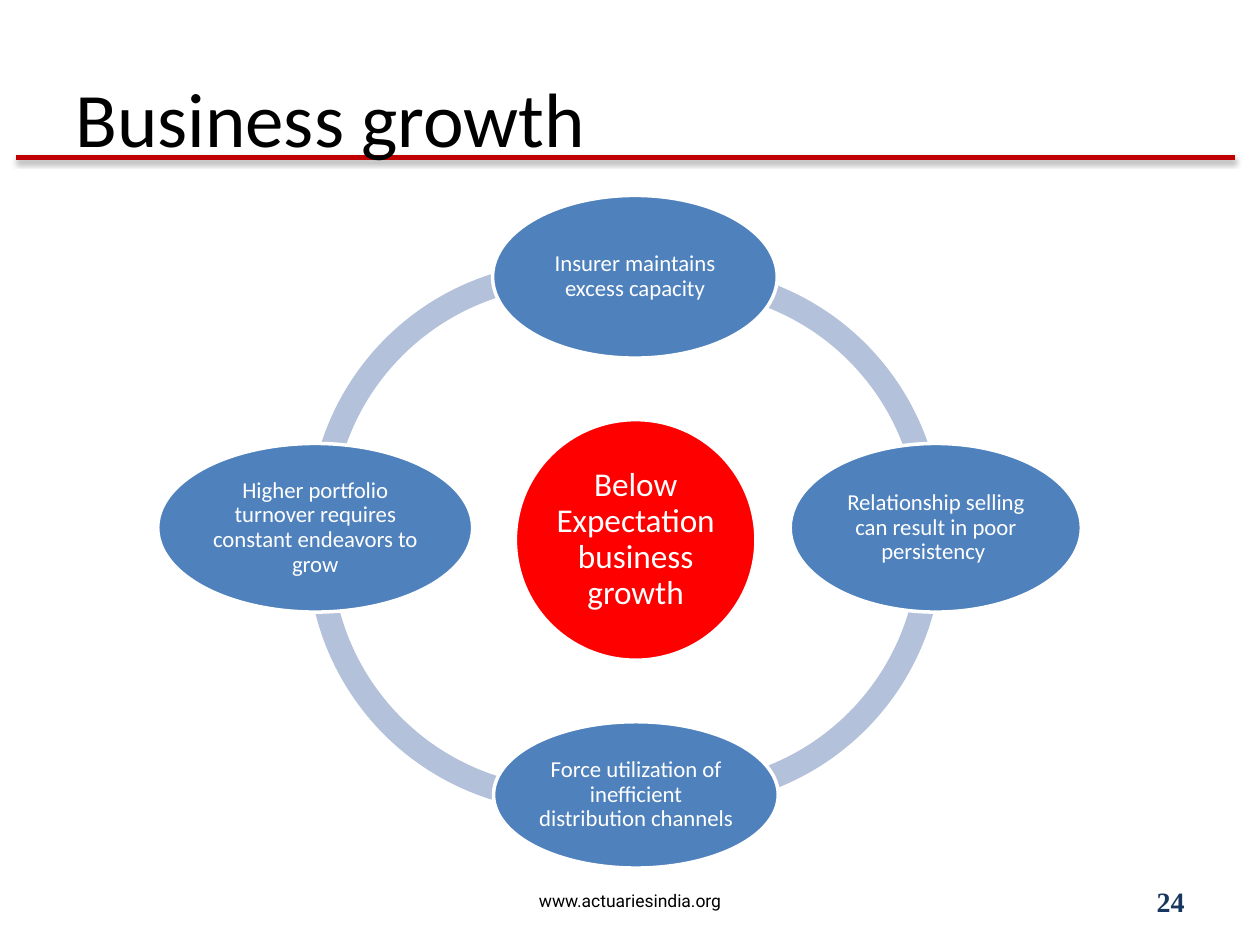
from lxml.etree import SubElement
from pptx import Presentation
from pptx.dml.color import RGBColor
from pptx.enum.shapes import MSO_CONNECTOR, MSO_SHAPE
from pptx.enum.text import MSO_ANCHOR, PP_ALIGN
from pptx.oxml.ns import qn
from pptx.util import Cm, Pt


def tint(code):
    return RGBColor.from_string(code)


def write(shape, text, size, font, code, align, bold=False):
    frame = shape.text_frame
    frame.word_wrap = True
    frame.vertical_anchor = MSO_ANCHOR.MIDDLE
    para = frame.paragraphs[0]
    para.alignment = align
    run = para.add_run()
    run.text = text
    run.font.size = Pt(size)
    run.font.name = font
    run.font.bold = bold
    run.font.color.rgb = tint(code)
    return frame


deck = Presentation()
deck.slide_width = Cm(25.4)
deck.slide_height = Cm(19.05)
slide = deck.slides.add_slide(deck.slide_layouts[6])
shapes = slide.shapes

rule = shapes.add_connector(MSO_CONNECTOR.STRAIGHT, Cm(0.33), Cm(3.18), Cm(24.89), Cm(3.18))
rule.line.color.rgb = tint("C00000")
rule.line.width = Pt(3)
effect = SubElement(rule._element.spPr, qn("a:effectLst"))
shade = SubElement(effect, qn("a:outerShdw"), blurRad=str(Pt(3.1)), dist=str(Pt(1.6)),
                   dir="5400000", rotWithShape="0")
black = SubElement(shade, qn("a:srgbClr"), val="000000")
SubElement(black, qn("a:alpha"), val="38000")

title = shapes.add_textbox(Cm(1.27), Cm(0.76), Cm(22.86), Cm(3.18))
write(title, "Business growth", 44, "Calibri", "000000", PP_ALIGN.LEFT)

arcs = [
    (6.22, 5.28, 179.31, 284.74),
    (6.2, 5.79, 75, 184.76),
    (8.43, 5.69, 356.31, 100.1),
    (8.43, 5.38, 259.96, 359.69),
]
for left, top, start, end in arcs:
    arc = shapes.add_shape(MSO_SHAPE.BLOCK_ARC, Cm(left), Cm(top), Cm(10.57), Cm(10.57))
    arc.shadow.inherit = False
    arc.fill.solid()
    arc.fill.fore_color.rgb = tint("B3C1DB")
    arc.line.fill.background()
    arc.adjustments[0] = start * 0.6
    arc.adjustments[1] = end * 0.6
    arc.adjustments[2] = 0.046

blue = "4F81BD"
nodes = [
    (10.39, 8.46, 4.85, 4.85, "FF0000", 19, 0.08, "Below Expectation business growth"),
    (9.93, 3.94, 5.74, 3.28, blue, 13, 0.05, "Insurer maintains excess capacity"),
    (15.93, 8.94, 5.87, 3.4, blue, 13, 0.05, "Relationship selling can result in poor persistency "),
    (9.95, 14.55, 5.74, 2.95, blue, 13, 0.05, "Force utilization of inefficient distribution channels"),
    (3.18, 8.94, 6.35, 3.4, blue, 13, 0.05, "Higher portfolio turnover requires constant endeavors to grow"),
]
for left, top, width, height, code, size, inset, text in nodes:
    node = shapes.add_shape(MSO_SHAPE.OVAL, Cm(left), Cm(top), Cm(width), Cm(height))
    node.shadow.inherit = False
    node.fill.solid()
    node.fill.fore_color.rgb = tint(code)
    node.line.color.rgb = tint("FFFFFF")
    node.line.width = Pt(2)
    frame = write(node, text, size, "Calibri", "FFFFFF", PP_ALIGN.CENTER)
    frame.margin_left = frame.margin_right = Cm(inset)
    frame.margin_top = frame.margin_bottom = Cm(inset)
    frame.paragraphs[0].line_spacing = 0.9

site = shapes.add_textbox(0, Cm(17.65), Cm(25.4), Cm(1.02))
write(site, "www.actuariesindia.org", 10, "Roboto", "000000", PP_ALIGN.CENTER)
page = shapes.add_textbox(Cm(18.21), Cm(17.65), Cm(5.92), Cm(1.02))
write(page, "24", 16, "Times New Roman", "17375E", PP_ALIGN.RIGHT, True)

deck.save("out.pptx")
